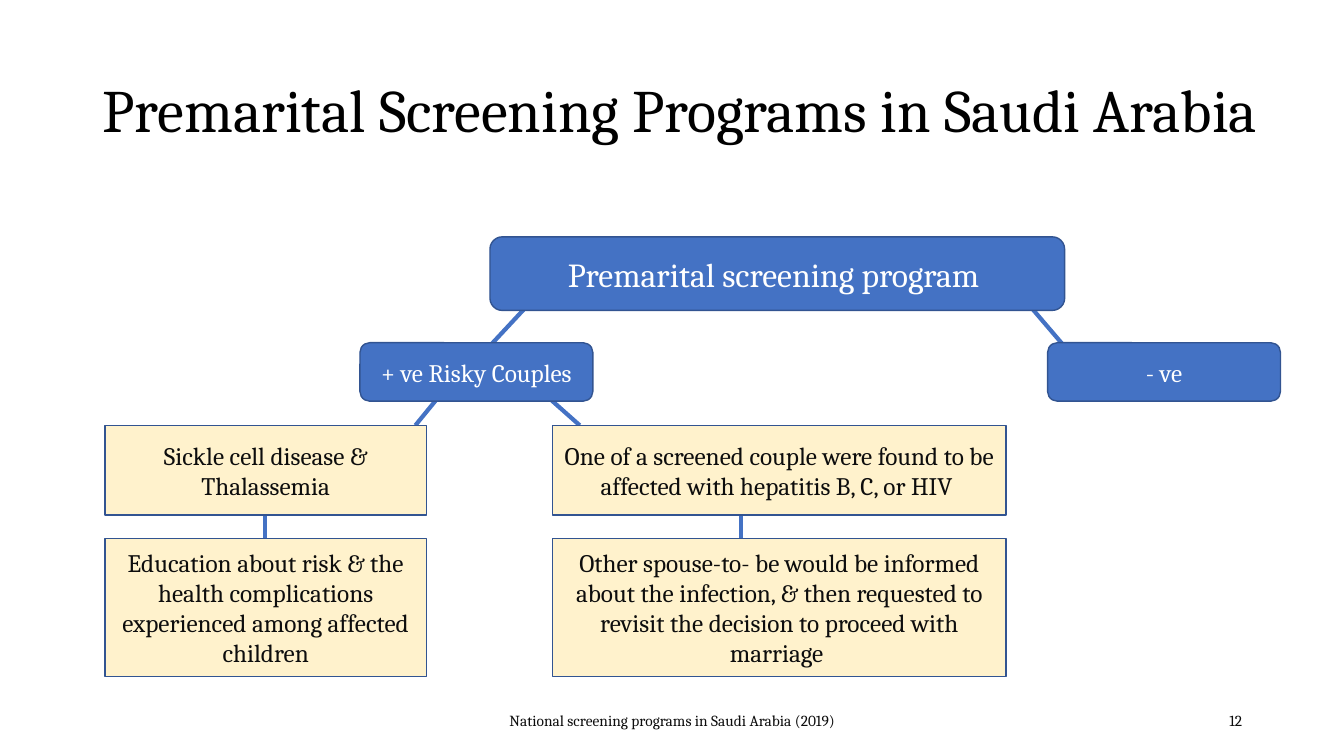
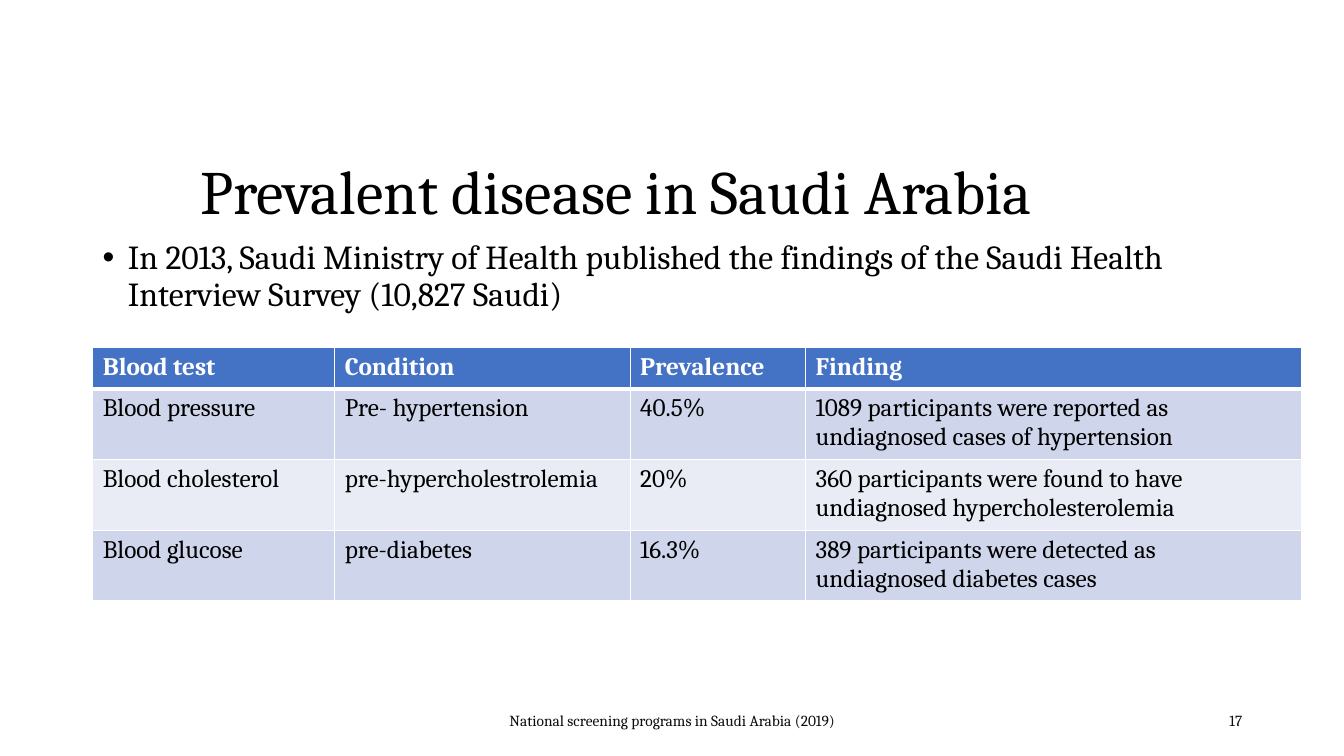
from lxml.etree import SubElement
from pptx import Presentation
from pptx.dml.color import RGBColor
from pptx.enum.shapes import MSO_CONNECTOR, MSO_SHAPE
from pptx.enum.text import MSO_ANCHOR, PP_ALIGN
from pptx.oxml.ns import qn
from pptx.util import Inches, Pt

COLORS = {
    "blue": "4472C4", "outline": "325491", "cream": "FFF2CC", "white": "FFFFFF",
    "black": "000000", "ink": "0D0D0D", "band": "CFD5EA", "pale": "E9EBF5",
}
FONT = "Cambria"
FOOTER = "National screening programs in Saudi Arabia (2019)"


def color(name):
    return RGBColor.from_string(COLORS[name])


def write(frame, text, size=18, ink="ink", align=PP_ALIGN.LEFT, bold=False,
          anchor=MSO_ANCHOR.MIDDLE, line_spacing=None, bullet=False):
    """Fill a text frame with one formatted paragraph."""
    frame.word_wrap = True
    frame.vertical_anchor = anchor
    paragraph = frame.paragraphs[0]
    paragraph.text = text
    paragraph.alignment = align
    if line_spacing:
        paragraph.line_spacing = line_spacing
    if bullet:
        properties = paragraph._p.get_or_add_pPr()
        properties.set("marL", str(Inches(0.25)))
        properties.set("indent", str(-Inches(0.25)))
        SubElement(properties, qn("a:buFont"), typeface="Arial")
        SubElement(properties, qn("a:buChar"), char="•")
    font = paragraph.runs[0].font
    font.name, font.size, font.bold = FONT, Pt(size), bold
    font.color.rgb = color(ink)


class Deck:
    """Holds the shared style and the current slide."""

    def __init__(self):
        self.presentation = Presentation()
        self.presentation.slide_width = Inches(13.33)
        self.presentation.slide_height = Inches(7.5)
        self.slide = None

    def new_slide(self, number):
        layout = self.presentation.slide_layouts[6]
        self.slide = self.presentation.slides.add_slide(layout)
        self.text(FOOTER, 4.42, 6.95, 4.5, 0.4, size=11, align=PP_ALIGN.CENTER)
        self.text(str(number), 9.42, 6.95, 3, 0.4, size=11, align=PP_ALIGN.RIGHT)

    def text(self, text, left, top, width, height, **style):
        shape = self.slide.shapes.add_textbox(
            Inches(left), Inches(top), Inches(width), Inches(height))
        write(shape.text_frame, text, **style)

    def title(self, text, left, top, width, size, align=PP_ALIGN.LEFT):
        self.text(text, left, top, width, 1.45, size=size, ink="black",
                  align=align, line_spacing=0.9)

    def box(self, text, left, top, width, height, size=18, rounded=False):
        kind = MSO_SHAPE.ROUNDED_RECTANGLE if rounded else MSO_SHAPE.RECTANGLE
        shape = self.slide.shapes.add_shape(
            kind, Inches(left), Inches(top), Inches(width), Inches(height))
        shape.shadow.inherit = False
        shape.fill.solid()
        shape.fill.fore_color.rgb = color("blue" if rounded else "cream")
        shape.line.color.rgb = color("outline")
        shape.line.width = Pt(1)
        write(shape.text_frame, text, size=size, align=PP_ALIGN.CENTER,
              ink="white" if rounded else "ink")

    def line(self, *ends):
        connector = self.slide.shapes.add_connector(
            MSO_CONNECTOR.STRAIGHT, *(Inches(value) for value in ends))
        connector.line.color.rgb = color("blue")
        connector.line.width = Pt(3)
        SubElement(connector._element.spPr, qn("a:effectLst"))

    def border(self, cell, edge, width):
        properties = cell._tc.get_or_add_tcPr()
        line = SubElement(properties, qn(f"a:{edge}"), w=str(Pt(width)))
        fill = SubElement(line, qn("a:solidFill"))
        SubElement(fill, qn("a:srgbClr"), val=COLORS["white"])

    def table(self, rows, left, top, widths, heights):
        frame = self.slide.shapes.add_table(
            len(rows), len(widths), Inches(left), Inches(top),
            Inches(sum(widths)), Inches(sum(heights)))
        table = frame.table
        for column, width in zip(table.columns, widths):
            column.width = Inches(width)
        for index, (row, height) in enumerate(zip(rows, heights)):
            table.rows[index].height = Inches(height)
            header = index == 0
            fill = "blue" if header else ("band" if index % 2 else "pale")
            for cell, text in zip(table.rows[index].cells, row):
                write(cell.text_frame, text, bold=header, anchor=MSO_ANCHOR.TOP,
                      ink="white" if header else "black")
                # Borders come before the fill in the cell properties
                for edge in ("lnL", "lnR", "lnT", "lnB"):
                    heavy = (edge, index) in (("lnB", 0), ("lnT", 1))
                    self.border(cell, edge, 3 if heavy else 1)
                cell.fill.solid()
                cell.fill.fore_color.rgb = color(fill)


def screening_slide(deck):
    deck.new_slide(12)
    deck.title("Premarital Screening Programs in Saudi Arabia", 0.92, 0.4, 11.92, 43)

    # Branches, behind the boxes
    for ends in ((5.75, 4.22, 4.86, 3.43), (4.86, 3.43, 5.27, 2.99),
                 (10.21, 3.03, 10.56, 3.44), (4.12, 4.22, 4.39, 3.89),
                 (2.63, 5.11, 2.63, 5.34), (7.35, 5.11, 7.35, 5.34)):
        deck.line(*ends)

    # Program and its two results
    deck.box("Premarital screening program ", 4.86, 2.35, 5.7, 0.73,
             size=24, rounded=True)
    for text, left in (("+ ve Risky Couples", 3.57), ("- ve", 10.39)):
        deck.box(text, left, 3.4, 2.31, 0.58, rounded=True)

    # Findings, each with its follow-up below
    for left, width, finding, action in (
        (1.04, 3.19, "Sickle cell disease & Thalassemia",
         "Education about risk & the health complications experienced "
         "among affected children"),
        (5.48, 4.5, "One of a screened couple were found to be affected "
         "with hepatitis B, C, or HIV ",
         "Other spouse-to- be would be informed about the infection, & then "
         "requested to revisit the decision to proceed with marriage "),
    ):
        deck.box(finding, left, 4.22, width, 0.89)
        deck.box(action, left, 5.34, width, 1.37)


def prevalence_slide(deck):
    deck.new_slide(17)
    deck.title("Prevalent disease in Saudi Arabia ", 0.43, 1.2, 11.5, 44,
               align=PP_ALIGN.CENTER)
    deck.text("In 2013, Saudi Ministry of Health published the findings of the "
              "Saudi Health Interview Survey (10,827 Saudi)",
              0.92, 2.34, 11.5, 4.76, size=24, ink="black",
              anchor=MSO_ANCHOR.TOP, line_spacing=0.9, bullet=True)
    deck.table([
        ("Blood test", "Condition", "Prevalence", "Finding"),
        ("Blood pressure", "Pre- hypertension", "40.5%",
         "1089 participants were reported as undiagnosed cases of hypertension"),
        ("Blood cholesterol", "pre-hypercholestrolemia", "20%",
         "360 participants were found to have undiagnosed hypercholesterolemia"),
        ("Blood glucose", "pre-diabetes", "16.3%",
         "389 participants were detected as undiagnosed diabetes cases"),
    ], 0.92, 3.45, (2.4, 2.93, 1.74, 4.92), (0.41, 0.68, 0.68, 0.68))


def main():
    deck = Deck()
    screening_slide(deck)
    prevalence_slide(deck)
    deck.presentation.save("out.pptx")


if __name__ == "__main__":
    main()
